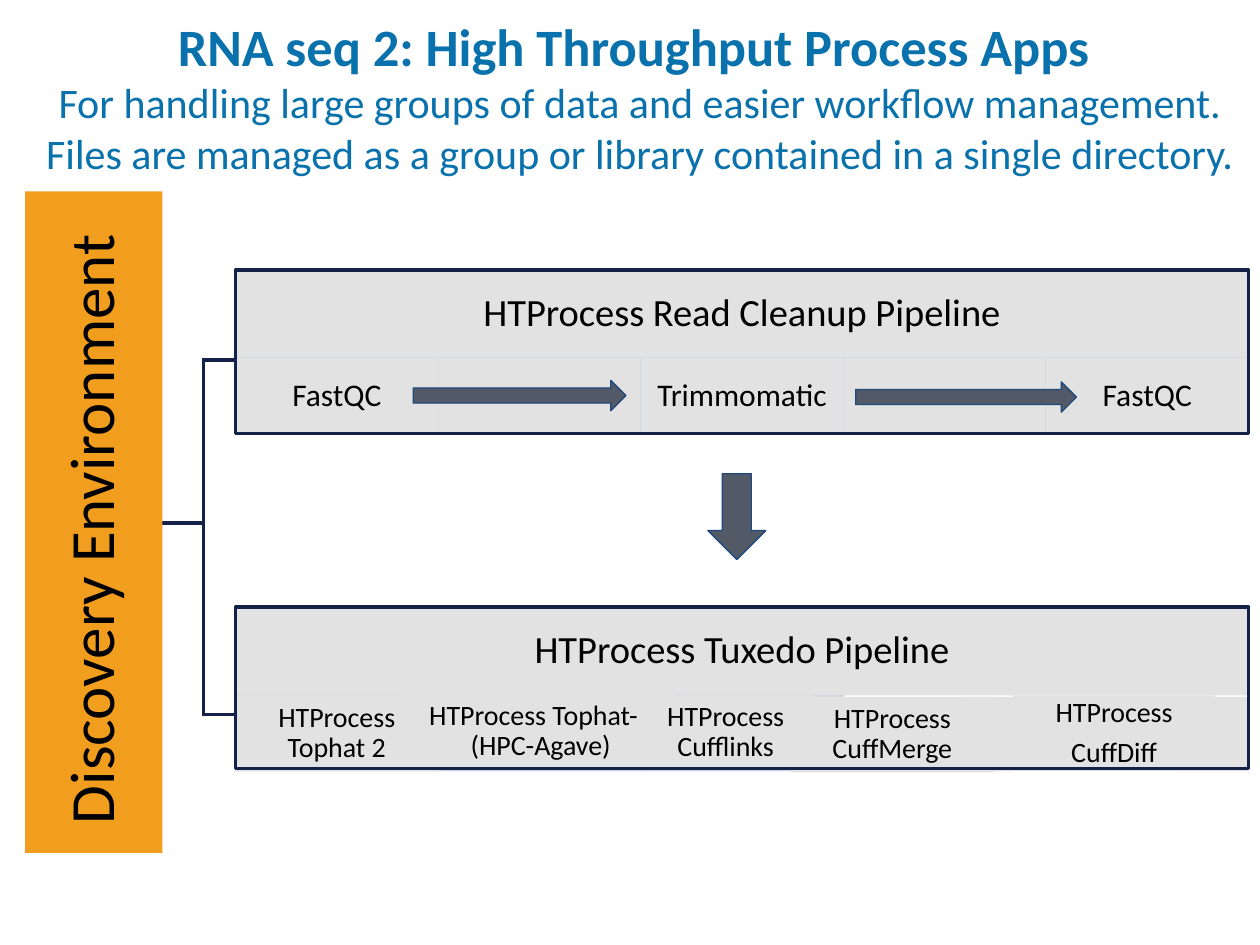
from lxml.etree import SubElement
from pptx import Presentation
from pptx.dml.color import RGBColor
from pptx.enum.shapes import MSO_CONNECTOR, MSO_SHAPE
from pptx.enum.text import MSO_ANCHOR, MSO_AUTO_SIZE, PP_ALIGN
from pptx.oxml.ns import qn
from pptx.util import Cm, Pt

NAVY = RGBColor(0x14, 0x22, 0x48)
GREY = RGBColor(0xE2, 0xE2, 0xE2)
PALE = RGBColor(0xCF, 0xD7, 0xE7)
SLATE = RGBColor(0x52, 0x5A, 0x68)
BLUE = RGBColor(0x1F, 0x49, 0x7D)
TITLE_BLUE = RGBColor(0x09, 0x71, 0xAB)
ORANGE = RGBColor(0xF1, 0x9E, 0x1F)
BLACK = RGBColor(0, 0, 0)
FONT = "Calibri"

# Content; places are left, top, width, height in cm
TITLE = "RNA seq 2: High Throughput Process Apps "
SUBTITLE = ("For handling large groups of data and easier workflow management. "
            "Files are managed as a group or library contained in a single directory.")
ENVIRONMENT = "Discovery Environment "

PANEL_LEFT, PANEL_WIDTH, HEADER_HEIGHT, STEP_HEIGHT = 4.75, 20.42, 1.78, 1.52
COLUMN = PANEL_WIDTH / 5
CLEANUP_TOP, TUXEDO_TOP = 5.44, 12.24
CLEANUP_STEPS = ["FastQC", "", "Trimmomatic", "", "FastQC"]
TUXEDO_STEPS = [  # text, left, top, width, height, side margin, top margin
    ("HTProcess Tophat 2", 4.75, 14.02, 4.08, 1.52, 0.3, 0.05),
    ("HTProcess CuffMerge", 15.95, 14.05, 4.08, 1.52, 0.3, 0.05),
    ("", 19.38, 14.05, 1.04, 1.5, 0, 0),
    ("HTProcess\nCuffDiff", 20.42, 14.02, 4.08, 1.52, 0.3, 0.05),
    ("", 23.75, 14.05, 1.42, 1.5, 0, 0),
    ("HTProcess Tophat-2 (HPC-Agave)", 8.18, 14, 5.44, 1.5, 0.25, 0.25),
    ("HTProcess Cufflinks", 12.85, 14.02, 3.56, 1.48, 0.3, 0.05),
]
FRAMES = [(CLEANUP_TOP, 3.3), (TUXEDO_TOP, 3.25)]
BRACKET = [  # x1, y1, x2, y2
    (3.02, 10.54, 4.1, 10.54),
    (4.1, 7.26, 4.75, 7.26),
    (4.1, 14.4, 4.75, 14.4),
    (4.1, 7.21, 4.1, 14.43),
]
ARROWS = [
    (MSO_SHAPE.DOWN_ARROW, 14.27, 9.55, 1.17, 1.73),
    (MSO_SHAPE.RIGHT_ARROW, 8.33, 7.67, 4.29, 0.61),
    (MSO_SHAPE.RIGHT_ARROW, 17.25, 7.7, 4.45, 0.61),
]

presentation = Presentation()
presentation.slide_width, presentation.slide_height = Cm(25.4), Cm(19.05)
slide = presentation.slides.add_slide(presentation.slide_layouts[5])


def add_block(place, fill=None, line=None, width=0.75, kind=MSO_SHAPE.RECTANGLE):
    shape = slide.shapes.add_shape(kind, *map(Cm, place))
    shape.shadow.inherit = False
    if fill is None:
        shape.fill.background()
    else:
        shape.fill.solid()
        shape.fill.fore_color.rgb = fill
    if line is None:
        shape.line.fill.background()
    else:
        shape.line.color.rgb = line
        shape.line.width = Pt(width)
    return shape


def add_label(text, place, size, side, top, fill=GREY):
    shape = add_block(place, fill)
    if not text:
        return shape
    frame = shape.text_frame
    frame.text = text
    frame.word_wrap = True
    frame.vertical_anchor = MSO_ANCHOR.MIDDLE
    frame.margin_left = frame.margin_right = Cm(side)
    frame.margin_top = frame.margin_bottom = Cm(top)
    for index, paragraph in enumerate(frame.paragraphs):
        paragraph.alignment = PP_ALIGN.CENTER
        paragraph.line_spacing = 0.9
        if index:
            paragraph.space_before = Pt(5.6)
        font = paragraph.runs[0].font
        font.name, font.size, font.color.rgb = FONT, Pt(size), BLACK
    return shape


def add_cell(column, top):
    """Pale, slightly transparent cell behind a step; returns its place."""
    place = (PANEL_LEFT + column * COLUMN, top, COLUMN, STEP_HEIGHT)
    shape = add_block(place, PALE, PALE)
    for color in shape._element.spPr.iter(qn("a:srgbClr")):
        SubElement(color, qn("a:alpha"), val="89000")
    return place


def add_header(text, top):
    add_label(text, (PANEL_LEFT, top, PANEL_WIDTH, HEADER_HEIGHT), 22, 0.43, 0.43)


# Title and subtitle
title = slide.shapes.title
title.left, title.top, title.width, title.height = map(Cm, (0.2, 0.15, 25.4, 3.33))
frame = title.text_frame
frame.text = f"{TITLE}\n{SUBTITLE}"
frame.word_wrap = True
frame.auto_size = MSO_AUTO_SIZE.NONE
frame.vertical_anchor = MSO_ANCHOR.TOP
for paragraph, size, bold in zip(frame.paragraphs, (30, 24), (True, False)):
    paragraph.alignment = PP_ALIGN.CENTER
    font = paragraph.runs[0].font
    font.name, font.size, font.bold = FONT, Pt(size), bold
    font.color.rgb = TITLE_BLUE

# Bracket from the environment to both pipelines
for ends in BRACKET:
    connector = slide.shapes.add_connector(MSO_CONNECTOR.STRAIGHT, *map(Cm, ends))
    connector.line.color.rgb = NAVY
    connector.line.width = Pt(2)
    SubElement(connector._element.spPr, qn("a:effectLst"))

# Read cleanup pipeline
add_header("HTProcess Read Cleanup Pipeline", CLEANUP_TOP)
for column, step in enumerate(CLEANUP_STEPS):
    add_label(step, add_cell(column, CLEANUP_TOP + HEADER_HEIGHT), 18, 0.28, 0.05)

# Arrows
for kind, *place in ARROWS:
    add_block(place, SLATE, BLUE, kind=kind)

# Environment bar, read from bottom to top
bar = add_label(ENVIRONMENT, (-4.78, 9.14, 13.34, 2.77), 36, 0.08, 0.08, ORANGE)
bar.rotation = 270

# Tuxedo pipeline
add_header("HTProcess Tuxedo Pipeline", TUXEDO_TOP)
for column in range(3):
    add_cell(column, TUXEDO_TOP + HEADER_HEIGHT)
for text, left, top, width, height, side, inset in TUXEDO_STEPS:
    add_label(text, (left, top, width, height), 16, side, inset)

# Frames around the pipelines
for top, height in FRAMES:
    add_block((PANEL_LEFT, top, PANEL_WIDTH, height), line=NAVY, width=2)

presentation.save("out.pptx")
